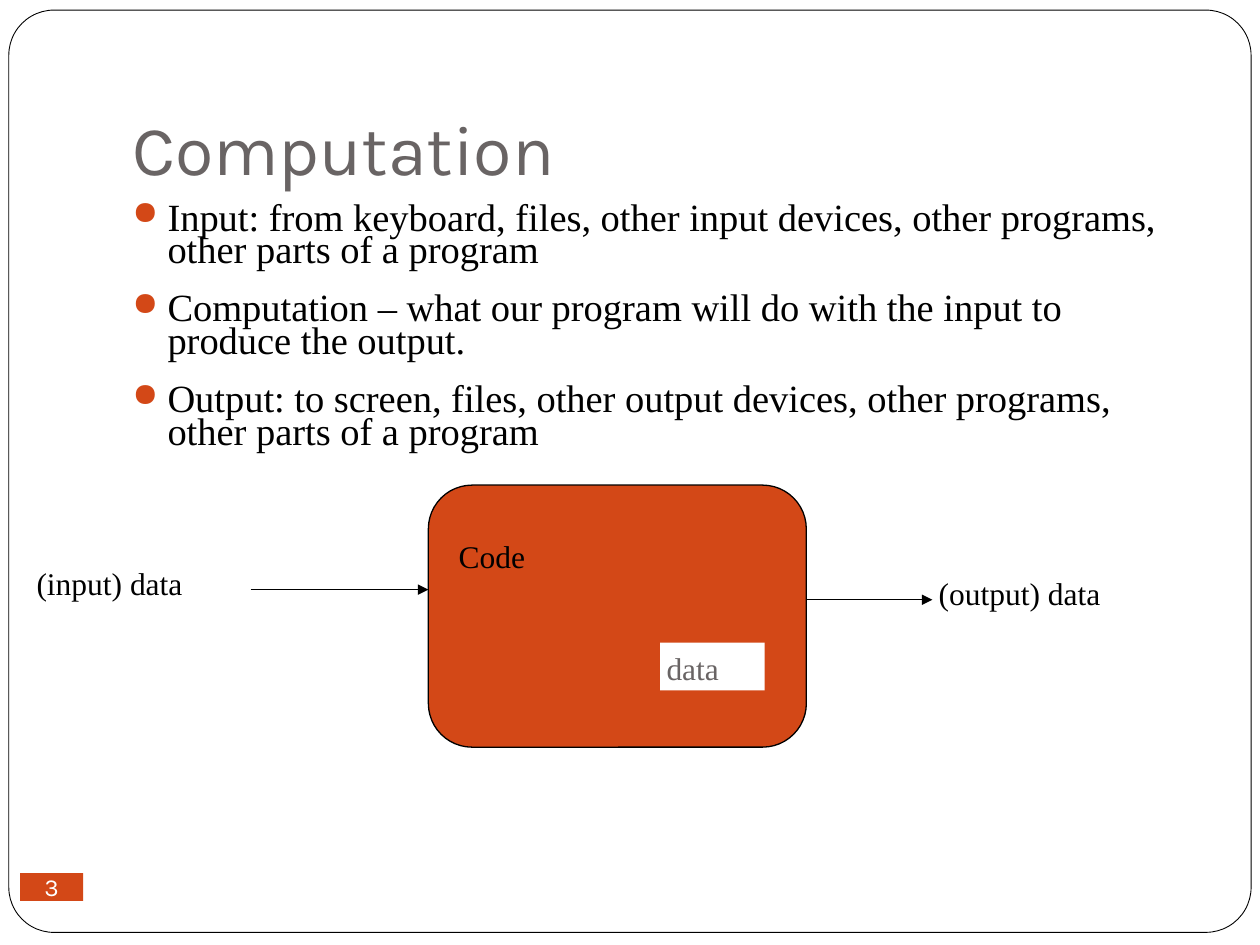
from lxml.etree import SubElement
from pptx import Presentation
from pptx.dml.color import RGBColor
from pptx.enum.shapes import MSO_CONNECTOR as Connector, MSO_SHAPE as Shape
from pptx.enum.text import MSO_ANCHOR as Anchor, PP_ALIGN as Align
from pptx.oxml.ns import qn
from pptx.util import Inches, Pt

COLORS = {"accent": "D34817", "grey": "696464", "black": "000000", "white": "FFFFFF"}
HEADING, BODY = "Karla", "Times New Roman"
COLUMNS, ROWS = 100, 75
LABEL_HEIGHT = 3.8
BULLETS = [
    "Input: from keyboard, files, other input devices, other programs, "
    "other parts of a program",
    "Computation – what our program will do with the input to produce the output.",
    "Output: to screen, files, other output devices, other programs, "
    "other parts of a program",
]


def color(name):
    return RGBColor.from_string(COLORS[name])


class SlideBuilder:
    """Draws on one slide; places are in grid columns and rows."""

    def __init__(self, deck):
        self.column = deck.slide_width / COLUMNS
        self.row = deck.slide_height / ROWS
        self.page = deck.slides.add_slide(deck.slide_layouts[6])

    def scale(self, *place):
        units = (self.column, self.row) * 2
        return [round(value * unit) for value, unit in zip(place, units)]

    def shape(self, kind, place, fill, line_width=None, corner=None):
        shape = self.page.shapes.add_shape(kind, *self.scale(*place))
        shape.shadow.inherit = False
        shape.fill.solid()
        shape.fill.fore_color.rgb = color(fill)
        if line_width:
            shape.line.color.rgb = color("black")
            shape.line.width = Pt(line_width)
        else:
            shape.line.fill.background()
        if corner is not None:
            shape.adjustments[0] = corner
        return shape

    def fill_text(self, box, lines, size=18, font=BODY, ink="black",
                  anchor=Anchor.TOP, align=Align.LEFT, inset=0.05):
        frame = box.text_frame
        frame.word_wrap = True
        frame.vertical_anchor = anchor
        frame.margin_left = frame.margin_right = Inches(inset)
        frame.margin_top = frame.margin_bottom = Inches(inset)
        frame.text = "\n".join(lines)
        for para in frame.paragraphs:
            para.alignment = align
            para.font.size = Pt(size)
            para.font.name = font
            para.font.color.rgb = color(ink)
        return frame

    def text(self, place, *lines, **style):
        box = self.page.shapes.add_textbox(*self.scale(*place))
        return self.fill_text(box, lines, **style)

    def bullets(self, place, lines):
        for para in self.text(place, *lines, size=22).paragraphs:
            para.line_spacing = 0.7
            para.space_before = Pt(15)
            props = para._p.get_or_add_pPr()
            props.set("marL", str(Inches(0.28)))
            props.set("indent", str(-Inches(0.28)))
            bullet_color = SubElement(props, qn("a:buClr"))
            SubElement(bullet_color, qn("a:srgbClr"), val=COLORS["accent"])
            SubElement(props, qn("a:buSzPct"), val="85000")
            SubElement(props, qn("a:buChar"), char="●")
            # The schema wants the bullet marks before the default run style.
            props.append(props.find(qn("a:defRPr")))

    def arrow(self, left, right, row):
        ends = self.scale(left, row, right, row)
        arrow = self.page.shapes.add_connector(Connector.STRAIGHT, *ends)
        arrow.line.color.rgb = color("black")
        arrow.line.width = Pt(0.75)
        SubElement(arrow.line._get_or_add_ln(), qn("a:tailEnd"), type="triangle")
        SubElement(arrow._element.spPr, qn("a:effectLst"))


def main():
    deck = Presentation()
    deck.slide_width, deck.slide_height = Inches(10), Inches(7.5)
    slide = SlideBuilder(deck)

    slide.shape(Shape.ROUNDED_RECTANGLE, (0.7, 0.8, 98.6, 73.2), "white", 0.5, 0.049)
    slide.text((10, 3, 85, 12.5), "Computation", size=40, font=HEADING,
               ink="grey", anchor=Anchor.BOTTOM)
    slide.bullets((10, 15.8, 85, 50), BULLETS)

    slide.shape(Shape.ROUNDED_RECTANGLE, (34, 38.5, 30, 20.8), "accent", 0.75, 0.167)
    for label, left, top, width in [("(input) data", 2.4, 44.3, 18.3),
                                    ("(output) data", 74, 45.1, 19.2),
                                    ("Code", 35.9, 42.1, 11.4)]:
        slide.text((left, top, width, LABEL_HEIGHT), label)
    slide.arrow(19.9, 34, 46.8)
    slide.arrow(64, 74, 47.6)
    data = slide.shape(Shape.RECTANGLE, (52.4, 51, 8.3, LABEL_HEIGHT), "white")
    slide.fill_text(data, ["data"], ink="grey")

    number = slide.shape(Shape.RECTANGLE, (1.6, 69.3, 5, 2.2), "accent")
    slide.fill_text(number, ["3"], size=14, font=HEADING, ink="white",
                    anchor=Anchor.MIDDLE, align=Align.CENTER, inset=0)

    deck.save("out.pptx")


if __name__ == "__main__":
    main()
